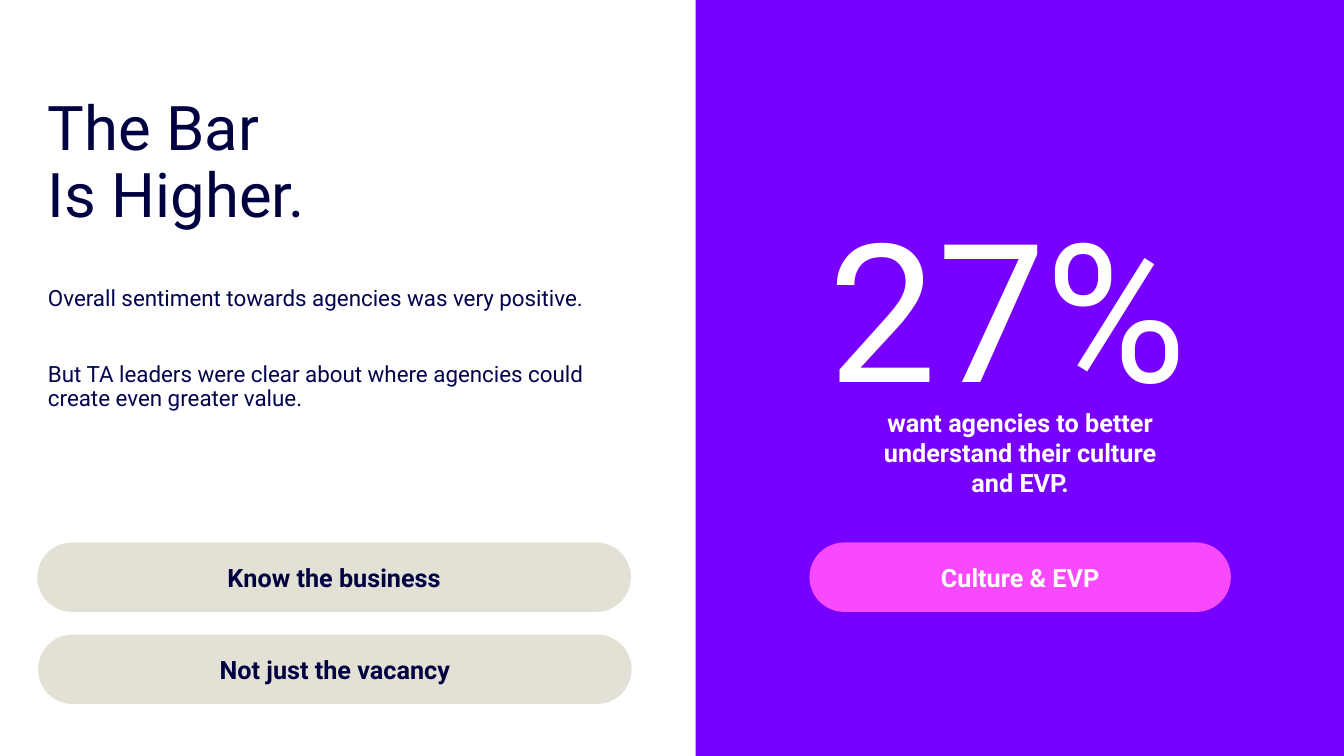
from pptx import Presentation
from pptx.dml.color import RGBColor
from pptx.enum.shapes import MSO_SHAPE
from pptx.enum.text import MSO_ANCHOR, PP_ALIGN
from pptx.util import Cm, Pt

RECT, PILL = MSO_SHAPE.RECTANGLE, MSO_SHAPE.ROUNDED_RECTANGLE
TOP, MIDDLE = MSO_ANCHOR.TOP, MSO_ANCHOR.MIDDLE
LEFT, CENTER = PP_ALIGN.LEFT, PP_ALIGN.CENTER

FONT = "Roboto"
NAVY, INK, WHITE = "000040", "03044E", "FFFFFF"
PURPLE, PINK, SAND = "7800FF", "F949FF", "E3E1D6"

TITLE = "The Bar\vIs Higher."
BODY = [
    "Overall sentiment towards agencies was very positive.",
    "But TA leaders were clear about where agencies could create even greater value.",
]
FIGURE = "27%"
CLAIM = "want agencies to better understand their culture and EVP."

# Lengths in centimetres
SLIDE_W, SLIDE_H = 33.87, 19.05
PANEL_X = 17.53
MARGIN = 0.96
PILL_TOP, PILL_H, PILL_STEP = 13.67, 1.75, 2.32
# text, left, row, width, fill, text colour
PILLS = [
    ("Know the business", 0.94, 0, 14.96, SAND, NAVY),
    ("Not just the vacancy", 0.96, 1, 14.96, SAND, NAVY),
    ("Culture & EVP", 20.4, 0, 10.62, PINK, WHITE),
]


def rgb(value):
    return RGBColor.from_string(value)


def write(sp, lines, size, color, bold=False, align=LEFT, anchor=TOP, spacing=1.0, gap=0):
    """Fill a shape with paragraphs, with gap points between them."""
    tf = sp.text_frame
    tf.word_wrap = True
    tf.vertical_anchor = anchor
    for i, line in enumerate(lines):
        p = tf.add_paragraph() if i else tf.paragraphs[0]
        p.text = line
        p.alignment = align
        p.line_spacing = spacing
        p.space_before = Pt(gap if i else 0)
        p.font.name = FONT
        p.font.size = Pt(size)
        p.font.bold = bold
        p.font.color.rgb = rgb(color)


def add_text(slide, box, lines, size, color, **style):
    write(slide.shapes.add_textbox(*map(Cm, box)), lines, size, color, **style)


def add_block(slide, kind, box, fill):
    sp = slide.shapes.add_shape(kind, *map(Cm, box))
    sp.shadow.inherit = False
    sp.fill.solid()
    sp.fill.fore_color.rgb = rgb(fill)
    sp.line.fill.background()
    return sp


def main():
    prs = Presentation()
    prs.slide_width, prs.slide_height = Cm(SLIDE_W), Cm(SLIDE_H)
    slide = prs.slides.add_slide(prs.slide_layouts[6])

    add_block(slide, RECT, (PANEL_X, 0, SLIDE_W - PANEL_X, SLIDE_H), PURPLE)
    add_text(slide, (MARGIN, 0.74, 9.58, 6.8), [TITLE], 44, NAVY, anchor=MIDDLE, spacing=0.9)
    add_text(slide, (MARGIN, 7.11, 15.67, 5.74), BODY, 16, INK, spacing=0.9, gap=37)
    add_text(slide, (SLIDE_W / 2, 4.65, SLIDE_W / 2, 6.15), [FIGURE], 138, WHITE, align=CENTER)
    add_text(slide, (21.95, 10.13, 7.52, 2.57), [CLAIM], 18, WHITE, bold=True, align=CENTER)

    for text, left, row, width, fill, color in PILLS:
        sp = add_block(slide, PILL, (left, PILL_TOP + row * PILL_STEP, width, PILL_H), fill)
        sp.adjustments[0] = 0.5
        write(sp, [text], 18, color, bold=True, align=CENTER, anchor=MIDDLE)

    prs.save("out.pptx")


if __name__ == "__main__":
    main()
